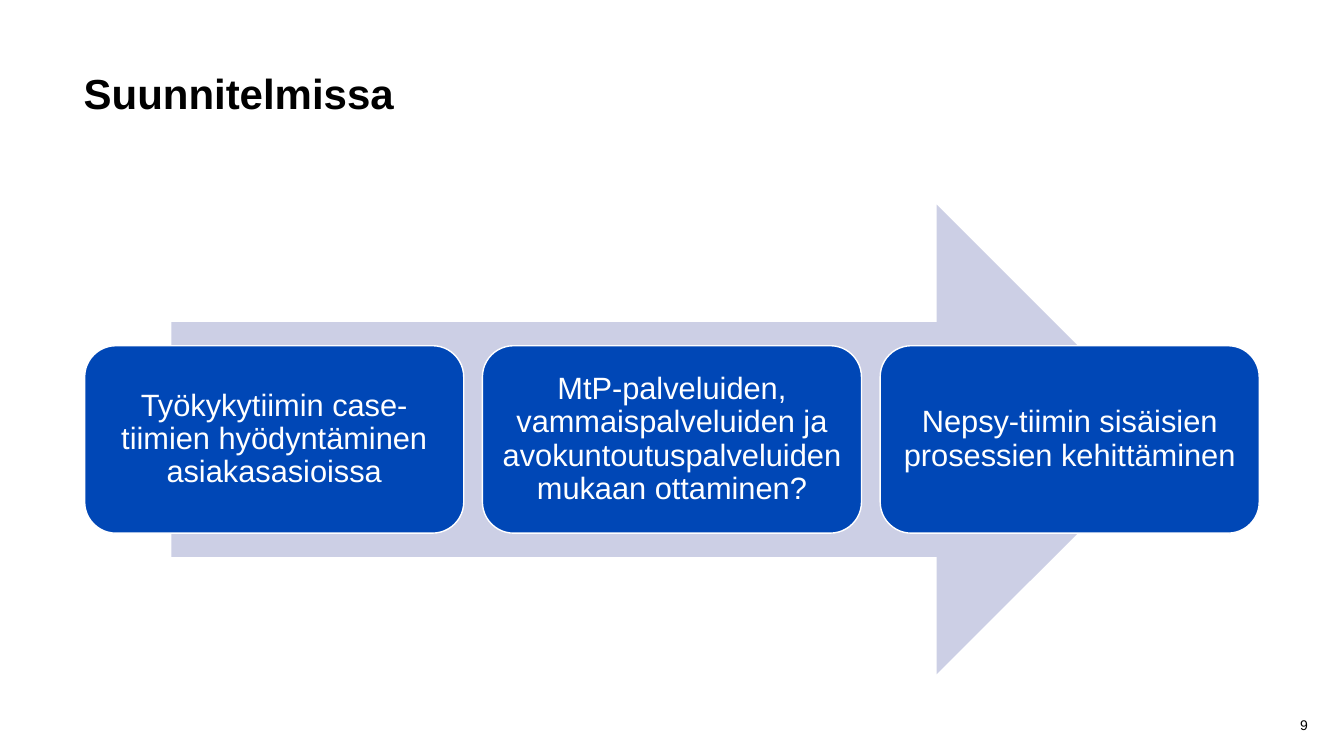
from dataclasses import dataclass

from pptx import Presentation
from pptx.dml.color import RGBColor
from pptx.enum.shapes import MSO_SHAPE as Shape
from pptx.enum.text import MSO_ANCHOR as Anchor, PP_ALIGN as Align
from pptx.util import Inches, Pt


@dataclass(frozen=True)
class Theme:
    font: str = "Arial"
    black: RGBColor = RGBColor(0x00, 0x00, 0x00)
    white: RGBColor = RGBColor(0xFF, 0xFF, 0xFF)
    blue: RGBColor = RGBColor(0x00, 0x47, 0xB6)
    lavender: RGBColor = RGBColor(0xCC, 0xCF, 0xE5)
    title_size: int = 30
    step_size: int = 22
    number_size: int = 10


THEME = Theme()
STEPS = (
    "Työkykytiimin case-tiimien hyödyntäminen asiakasasioissa",
    "MtP-palveluiden, vammaispalveluiden ja avokuntoutuspalveluiden mukaan ottaminen?",
    "Nepsy-tiimin sisäisien prosessien kehittäminen",
)
STEP_LEFT, STEP_PITCH = 0.84, 3.945


def write_text(box, text, size, color, align, anchor, inset=0, bold=False):
    frame = box.text_frame
    frame.word_wrap = True
    frame.vertical_anchor = anchor
    frame.margin_left = frame.margin_right = Inches(inset)
    frame.margin_top = frame.margin_bottom = Inches(inset)
    para = frame.paragraphs[0]
    para.text = text
    para.alignment = align
    para.font.name = THEME.font
    para.font.size = Pt(size)
    para.font.bold = bold
    para.font.color.rgb = color
    return para


def add_label(page, area, text, size, align, anchor, bold=False):
    box = page.shapes.add_textbox(*map(Inches, area))
    write_text(box, text, size, THEME.black, align, anchor, bold=bold)


def add_filled_shape(page, kind, area, fill):
    shape = page.shapes.add_shape(kind, *map(Inches, area))
    shape.shadow.inherit = False
    shape.fill.solid()
    shape.fill.fore_color.rgb = fill
    shape.line.fill.background()
    return shape


def add_step(page, left, text):
    box = add_filled_shape(page, Shape.ROUNDED_RECTANGLE, (left, 3.43, 3.76, 1.86), THEME.blue)
    box.line.color.rgb = THEME.white
    box.line.width = Pt(1)
    para = write_text(box, text, THEME.step_size, THEME.white, Align.CENTER, Anchor.MIDDLE, inset=0.09)
    para.line_spacing = 0.9


def main():
    deck = Presentation()
    deck.slide_width, deck.slide_height = Inches(13.33), Inches(7.5)
    page = deck.slides.add_slide(deck.slide_layouts[6])
    add_label(page, (0.83, 0.67, 9.22, 1.15), "Suunnitelmissa", THEME.title_size,
              Align.LEFT, Anchor.TOP, bold=True)
    add_filled_shape(page, Shape.RIGHT_ARROW, (1.7, 2.03, 9.92, 4.66), THEME.lavender)
    for index, text in enumerate(STEPS):
        add_step(page, STEP_LEFT + index * STEP_PITCH, text)
    add_label(page, (12.02, 7.03, 0.95, 0.32), "9", THEME.number_size, Align.RIGHT, Anchor.MIDDLE)
    deck.save("out.pptx")


if __name__ == "__main__":
    main()
